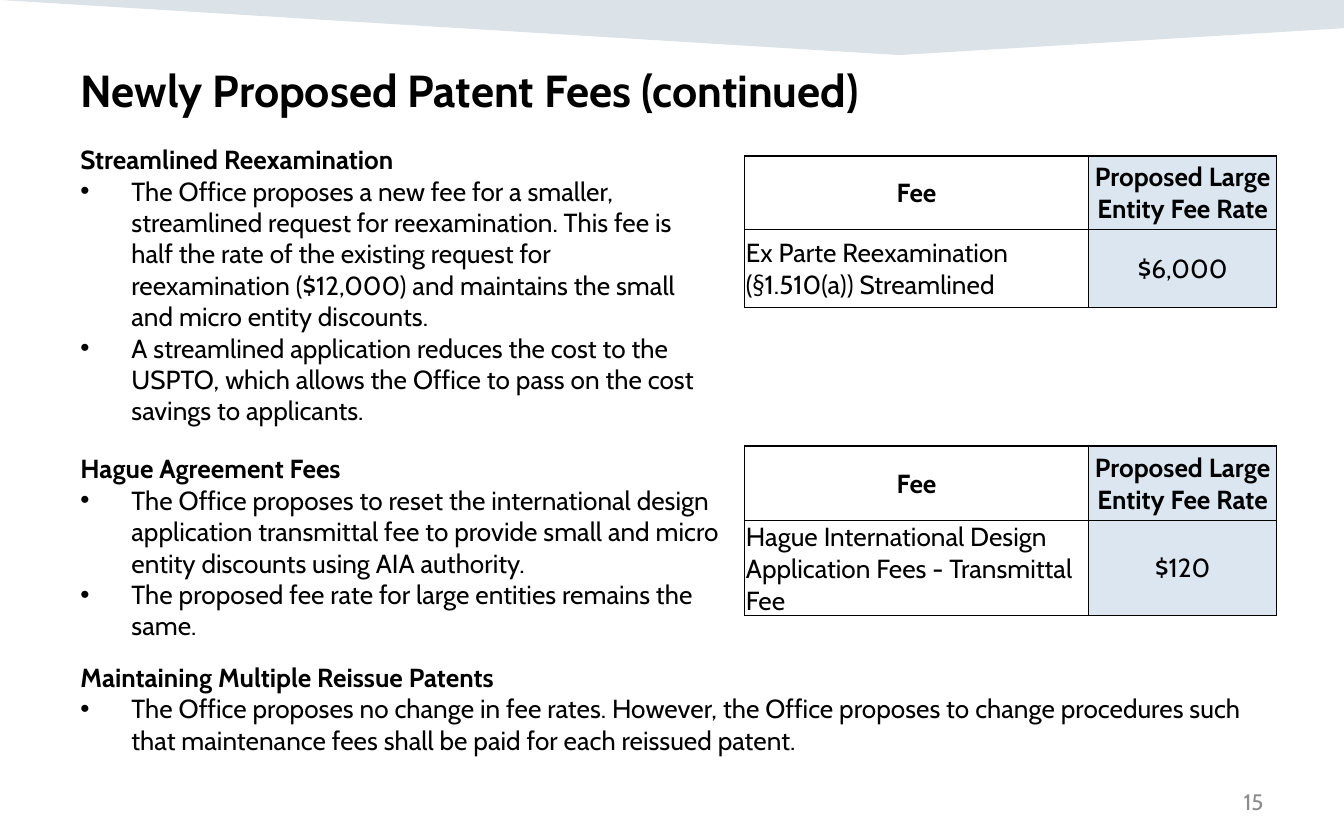
from lxml import etree
from pptx import Presentation
from pptx import util as u
from pptx.dml.color import RGBColor
from pptx.enum import text
from pptx.oxml.ns import qn

BLACK = RGBColor(0x00, 0x00, 0x00)
GREY = RGBColor(0x8C, 0x8C, 0x8C)
NAVY = RGBColor(0x16, 0x44, 0x69)
PALE_BLUE = RGBColor(0xDC, 0xE6, 0xF1)

UNIT = u.Inches(0.1)
LEFT, TABLE_LEFT = 5, 55.4
FEE_COLS, FEE_ROWS = (25.6, 14), (5.5, 5.8)
FEE_HEADINGS = ("Fee", "Proposed Large Entity Fee Rate")

SECTIONS = [
    ((LEFT, 10.2, 49, 24.6), "Streamlined Reexamination", [
        "The Office proposes a new fee for a smaller, streamlined request for "
        "reexamination. This fee is half the rate of the existing request for "
        "reexamination ($12,000) and maintains the small and micro entity discounts.",
        "A streamlined application reduces the cost to the USPTO, which allows "
        "the Office to pass on the cost savings to applicants."]),
    ((LEFT, 33.2, 50, 15.1), "Hague Agreement Fees", [
        "The Office proposes to reset the international design application "
        "transmittal fee to provide small and micro entity discounts using AIA authority.",
        "The proposed fee rate for large entities remains the same."]),
    ((LEFT, 48.7, 91.6, 8.1), "Maintaining Multiple Reissue Patents", [
        "The Office proposes no change in fee rates. However, the Office proposes "
        "to change procedures such that maintenance fees shall be paid for each "
        "reissued patent."]),
]

FEES = [
    (11.6, "Ex Parte Reexamination (§1.510(a)) Streamlined", "$6,000"),
    (33.2, "Hague International Design Application Fees - Transmittal Fee", "$120"),
]


def grid(*cells):
    return [round(cell * UNIT) for cell in cells]


class FeeSlide:
    """Holds the style and the current slide, measured on a grid of 100 columns by 62.5 rows."""

    font = "Cabin"
    body_size = 14

    def __init__(self, deck):
        self.slide = deck.slides.add_slide(deck.slide_layouts[5])

    def add_words(self, paragraph, words, size=body_size, bold=False, color=BLACK,
                  align=text.PP_ALIGN.LEFT):
        paragraph.alignment = align
        run = paragraph.add_run()
        run.text = words
        run.font.name, run.font.size, run.font.bold = self.font, u.Pt(size), bold
        run.font.color.rgb = color

    def bullet(self, paragraph):
        props = paragraph._p.get_or_add_pPr()
        props.set("marL", str(u.Inches(0.38)))
        props.set("indent", str(-u.Inches(0.38)))
        etree.SubElement(props, qn("a:buFont"), typeface="Arial")
        etree.SubElement(props, qn("a:buChar"), char="•")

    def banner(self, points):
        start, *rest = [tuple(grid(*point)) for point in points]
        builder = self.slide.shapes.build_freeform(*start)
        builder.add_line_segments(rest, close=True)
        band = builder.convert_to_shape()
        band.shadow.inherit = False
        band.line.fill.background()
        band.fill.solid()
        band.fill.fore_color.rgb = NAVY
        color = band._element.spPr.find(qn("a:solidFill"))[0]
        etree.SubElement(color, qn("a:alpha"), val="15000")

    def title(self, box, words):
        heading = self.slide.shapes.title
        heading.left, heading.top, heading.width, heading.height = grid(*box)
        frame = heading.text_frame
        frame.auto_size = text.MSO_AUTO_SIZE.NONE
        frame.vertical_anchor = text.MSO_ANCHOR.MIDDLE
        self.add_words(frame.paragraphs[0], words, size=24, bold=True)

    def textbox(self, box):
        frame = self.slide.shapes.add_textbox(*grid(*box)).text_frame
        frame.word_wrap = True
        return frame

    def section(self, box, heading, points):
        frame = self.textbox(box)
        self.add_words(frame.paragraphs[0], heading, bold=True)
        for point in points:
            paragraph = frame.add_paragraph()
            self.add_words(paragraph, point)
            self.bullet(paragraph)

    def page_number(self, box, number):
        frame = self.textbox(box)
        frame.vertical_anchor = text.MSO_ANCHOR.MIDDLE
        self.add_words(frame.paragraphs[0], number, size=12, color=GREY,
                       align=text.PP_ALIGN.RIGHT)

    def borders(self, cell, **widths):
        props = cell._tc.get_or_add_tcPr()
        for position, (side, width) in enumerate(widths.items()):
            line = etree.Element(qn(f"a:ln{side}"), w=str(u.Pt(width)))
            fill = etree.SubElement(line, qn("a:solidFill"))
            etree.SubElement(fill, qn("a:srgbClr"), val=str(BLACK))
            props.insert(position, line)

    def fee_table(self, top, rows):
        frame = self.slide.shapes.add_table(
            len(rows), len(FEE_COLS),
            *grid(TABLE_LEFT, top, sum(FEE_COLS), sum(FEE_ROWS)))
        table = frame.table
        table.first_row = table.horz_banding = False
        for column, width in zip(table.columns, grid(*FEE_COLS)):
            column.width = width
        for row, height in zip(table.rows, grid(*FEE_ROWS)):
            row.height = height
        for r, entries in enumerate(rows):
            for c, words in enumerate(entries):
                self.fee_cell(table.cell(r, c), words, header=r == 0, rate=c == 1)

    def fee_cell(self, cell, words, header, rate):
        cell.vertical_anchor = text.MSO_ANCHOR.MIDDLE
        cell.margin_left = cell.margin_right = cell.margin_top = u.Inches(0.01)
        cell.margin_bottom = 0
        if rate:
            cell.fill.solid()
            cell.fill.fore_color.rgb = PALE_BLUE
        else:
            cell.fill.background()
        self.borders(cell, L=0.5 if rate else 1, R=0.5, T=1 if header else 0.5, B=0.5)
        centred = header or rate
        self.add_words(cell.text_frame.paragraphs[0], words, bold=header,
                       align=text.PP_ALIGN.CENTER if centred else text.PP_ALIGN.LEFT)


def main():
    deck = Presentation()
    deck.slide_width, deck.slide_height = grid(100, 62.5)
    page = FeeSlide(deck)
    page.banner([(0, 0), (100, 0), (100, 2.1), (66.9, 4.1)])
    page.title((LEFT, 4.1, 90, 5.1), "Newly Proposed Patent Fees (continued)")
    for box, heading, points in SECTIONS:
        page.section(box, heading, points)
    for top, fee, rate in FEES:
        page.fee_table(top, [FEE_HEADINGS, (fee, rate)])
    page.page_number((71.7, 58, 23.3, 3.3), "15")
    deck.save("out.pptx")


if __name__ == "__main__":
    main()
